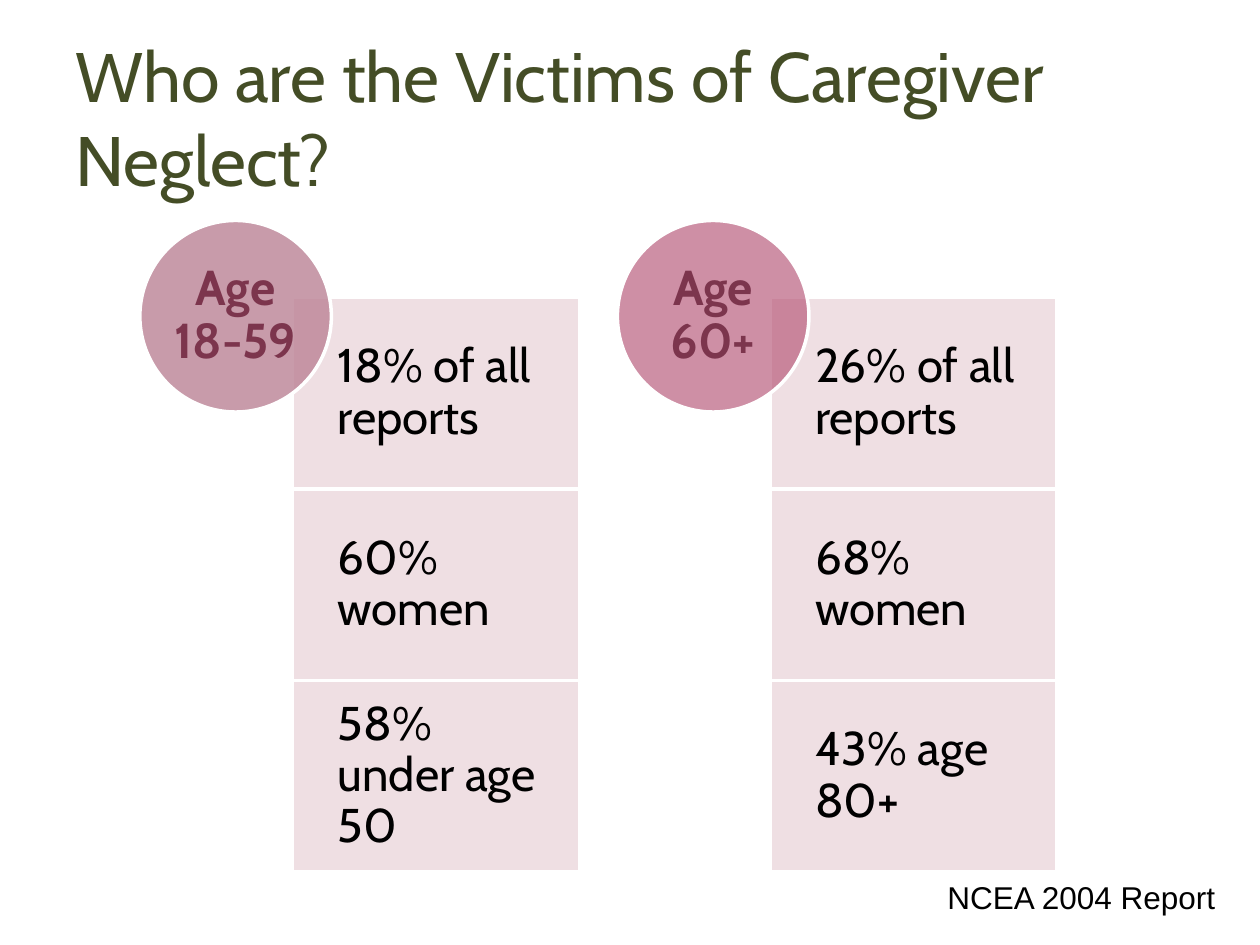
from lxml import etree
from pptx import Presentation
from pptx.dml.color import RGBColor
from pptx.enum import shapes, text
from pptx.oxml import ns
from pptx.util import Inches, Pt

OLIVE = RGBColor(0x44, 0x4D, 0x26)
BLACK = RGBColor(0, 0, 0)
WHITE = RGBColor(0xFF, 0xFF, 0xFF)
PALE_PINK = RGBColor(0xEE, 0xDC, 0xE1)
MAUVE = RGBColor(0xBD, 0x85, 0x98)
ROSE = RGBColor(0xB5, 0x54, 0x75)
WINE = RGBColor(0x7C, 0x35, 0x4D)

SIDE = 1.52  # card height and circle diameter
CARD_WIDTH = 2.28


def add_text(shape, words, size, color, font="Cabin", bold=False,
             align=text.PP_ALIGN.LEFT, spacing=None, wrap=True, insets=None):
    frame = shape.text_frame
    frame.word_wrap = wrap
    frame.vertical_anchor = text.MSO_ANCHOR.MIDDLE
    if insets is not None:
        left, other = insets
        frame.margin_left = Inches(left)
        frame.margin_top = frame.margin_right = frame.margin_bottom = Inches(other)
    para = frame.paragraphs[0]
    para.alignment = align
    para.line_spacing = spacing
    span = para.add_run()
    span.text = words
    span.font.name = font
    span.font.size = Pt(size)
    span.font.bold = bold
    span.font.color.rgb = color


def add_block(page, kind, left, top, width, color, opacity):
    block = page.shapes.add_shape(
        kind, Inches(left), Inches(top), Inches(width), Inches(SIDE))
    block.shadow.inherit = False
    block.fill.solid()
    block.fill.fore_color.rgb = color
    # Opacity in percent
    tint = block.fill._xPr.find(".//" + ns.qn("a:srgbClr"))
    etree.SubElement(tint, ns.qn("a:alpha")).set("val", str(opacity * 1000))
    block.line.color.rgb = WHITE
    block.line.width = Pt(2)
    return block


deck = Presentation()
deck.slide_width = Inches(10)
deck.slide_height = Inches(7.5)
page = deck.slides.add_slide(deck.slide_layouts[6])

# Title
title = page.shapes.add_textbox(Inches(0.5), Inches(0.3), Inches(9), Inches(1.25))
add_text(title, "Who are the Victims of Caregiver Neglect?", 40, OLIVE)

# Source of the figures
source = page.shapes.add_textbox(Inches(7.42), Inches(6.92), Inches(2.42), Inches(0.4))
add_text(source, "NCEA 2004 Report", 18, BLACK, font="Arial", wrap=False)

# One column per age group: three stacked cards under a circle
groups = [
    (1.11, "Age 18-59", MAUVE, 82,
     ["18% of all reports", "60% women", "58% under age 50"]),
    (4.9, "Age 60+", ROSE, 65,
     ["26% of all reports", "68% women", "43% age 80+"]),
]
for left, age, color, opacity, facts in groups:
    for row, fact in enumerate(facts):
        card = add_block(page, shapes.MSO_SHAPE.RECTANGLE, left + 1.21,
                         2.36 + row * SIDE, CARD_WIDTH, PALE_PINK, 90)
        add_text(card, fact, 27, BLACK, spacing=0.9, insets=(0.36, 0.21))
    circle = add_block(page, shapes.MSO_SHAPE.OVAL, left, 1.75, SIDE, color, opacity)
    add_text(circle, age, 28, WINE, bold=True, align=text.PP_ALIGN.CENTER,
             spacing=0.9, insets=(0, 0))

deck.save("out.pptx")
